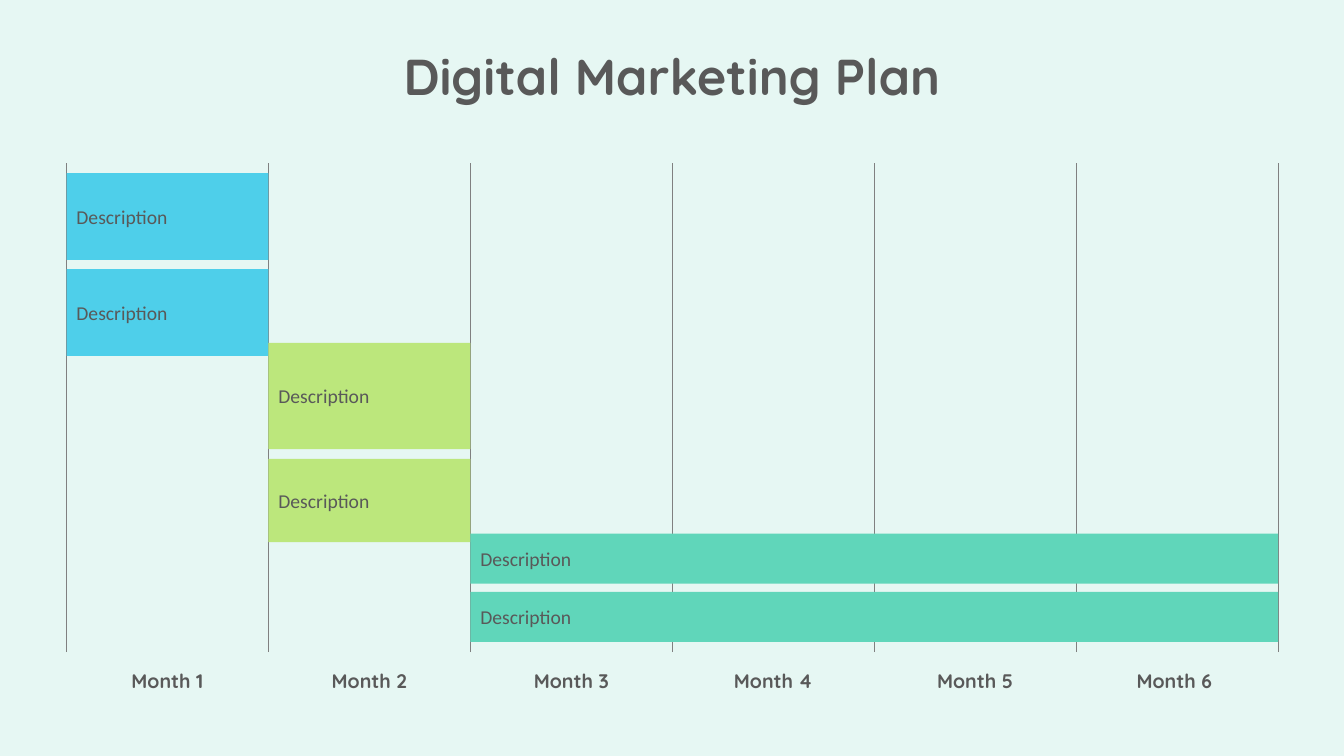
from lxml.etree import SubElement
from pptx import Presentation
from pptx.dml.color import RGBColor
from pptx.enum.shapes import MSO_CONNECTOR, MSO_SHAPE
from pptx.enum.text import MSO_ANCHOR, MSO_AUTO_SIZE, PP_ALIGN
from pptx.oxml.ns import qn
from pptx.util import Pt

TITLE = "Digital Marketing Plan"
MONTHS = ["Month 1", "Month 2", "Month 3", "Month 4", "Month 5", "Month 6 "]
BLUE, LIME, TEAL = "4ECFEA", "BCE77C", "60D6BA"
TASKS = [  # text, first month, months, top, height, fill
    ("Description", 0, 1, 123.6, 62, BLUE),
    ("Description", 0, 1, 192.2, 62, BLUE),
    ("Description", 1, 1, 244.9, 76, LIME),
    ("Description", 1, 1, 327.7, 59.6, LIME),
    ("Description", 2, 4, 381.1, 35.8, TEAL),
    ("Description", 2, 4, 422.7, 35.8, TEAL),
]
BACKGROUND, INK, RULE = "E6F7F3", "595959", "808080"
HEADING_FONT, BODY_FONT = "Quicksand", "Calibri"

GRID_LEFT, GRID_TOP, GRID_BOTTOM = 47.5, 116.6, 465.8
MONTH_WIDTH = 144.25
LABEL_TOP, LABEL_WIDTH, LABEL_HEIGHT = 474.5, 100, 24.2


def color(value):
    return RGBColor.from_string(value)


def month_left(index):
    return GRID_LEFT + index * MONTH_WIDTH


def place(shape, left, top, width, height):
    shape.left, shape.top = Pt(left), Pt(top)
    shape.width, shape.height = Pt(width), Pt(height)


def write(shape, text, size, font, bold, align, anchor):
    frame = shape.text_frame
    frame.word_wrap = True
    frame.auto_size = MSO_AUTO_SIZE.NONE
    frame.vertical_anchor = anchor
    frame.margin_left = frame.margin_right = Pt(7.2)
    frame.margin_top = frame.margin_bottom = Pt(3.6)
    paragraph = frame.paragraphs[0]
    paragraph.alignment = align
    paragraph.line_spacing = 1.0
    paragraph.space_before = Pt(0)
    run = paragraph.add_run()
    run.text = text
    run.font.name = font
    run.font.size = Pt(size)
    run.font.bold = bold
    run.font.color.rgb = color(INK)


def add_month_line(slide, index):
    x = Pt(month_left(index))
    line = slide.shapes.add_connector(
        MSO_CONNECTOR.STRAIGHT, x, Pt(GRID_BOTTOM), x, Pt(GRID_TOP))
    line.line.color.rgb = color(RULE)
    line.line.width = Pt(0.5)
    SubElement(line._element.spPr, qn("a:effectLst"))


def add_month_label(slide, index, month):
    left = month_left(index) + (MONTH_WIDTH - LABEL_WIDTH) / 2
    label = slide.shapes.add_textbox(
        Pt(left), Pt(LABEL_TOP), Pt(LABEL_WIDTH), Pt(LABEL_HEIGHT))
    write(label, month, 14, HEADING_FONT, True, PP_ALIGN.CENTER, MSO_ANCHOR.TOP)


def add_task(slide, text, first, months, top, height, fill):
    bar = slide.shapes.add_shape(
        MSO_SHAPE.RECTANGLE, Pt(month_left(first)), Pt(top),
        Pt(months * MONTH_WIDTH), Pt(height))
    bar.shadow.inherit = False
    bar.fill.solid()
    bar.fill.fore_color.rgb = color(fill)
    bar.line.fill.background()
    write(bar, text, 14, BODY_FONT, False, PP_ALIGN.LEFT, MSO_ANCHOR.MIDDLE)


def main():
    deck = Presentation()
    deck.slide_width, deck.slide_height = Pt(960), Pt(540)
    slide = deck.slides.add_slide(deck.slide_layouts[5])
    slide.background.fill.solid()
    slide.background.fill.fore_color.rgb = color(BACKGROUND)

    title = slide.shapes.title
    place(title, 101.3, 28.8, 757.4, 51)
    write(title, TITLE, 36, HEADING_FONT, True, PP_ALIGN.CENTER, MSO_ANCHOR.TOP)

    for index in range(len(MONTHS) + 1):
        add_month_line(slide, index)
    for index, month in enumerate(MONTHS):
        add_month_label(slide, index, month)
    for task in TASKS:
        add_task(slide, *task)

    deck.save("out.pptx")


if __name__ == "__main__":
    main()
